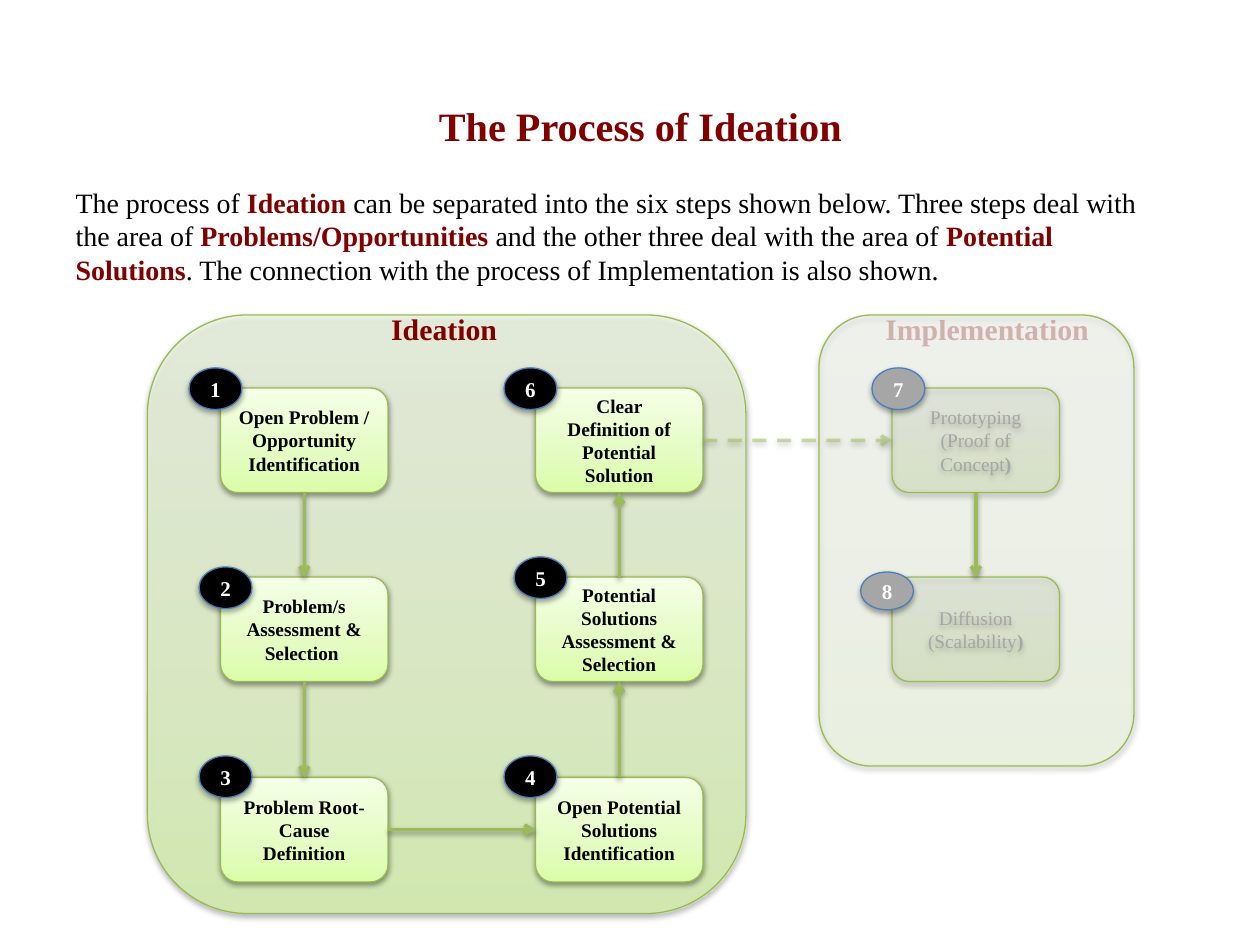
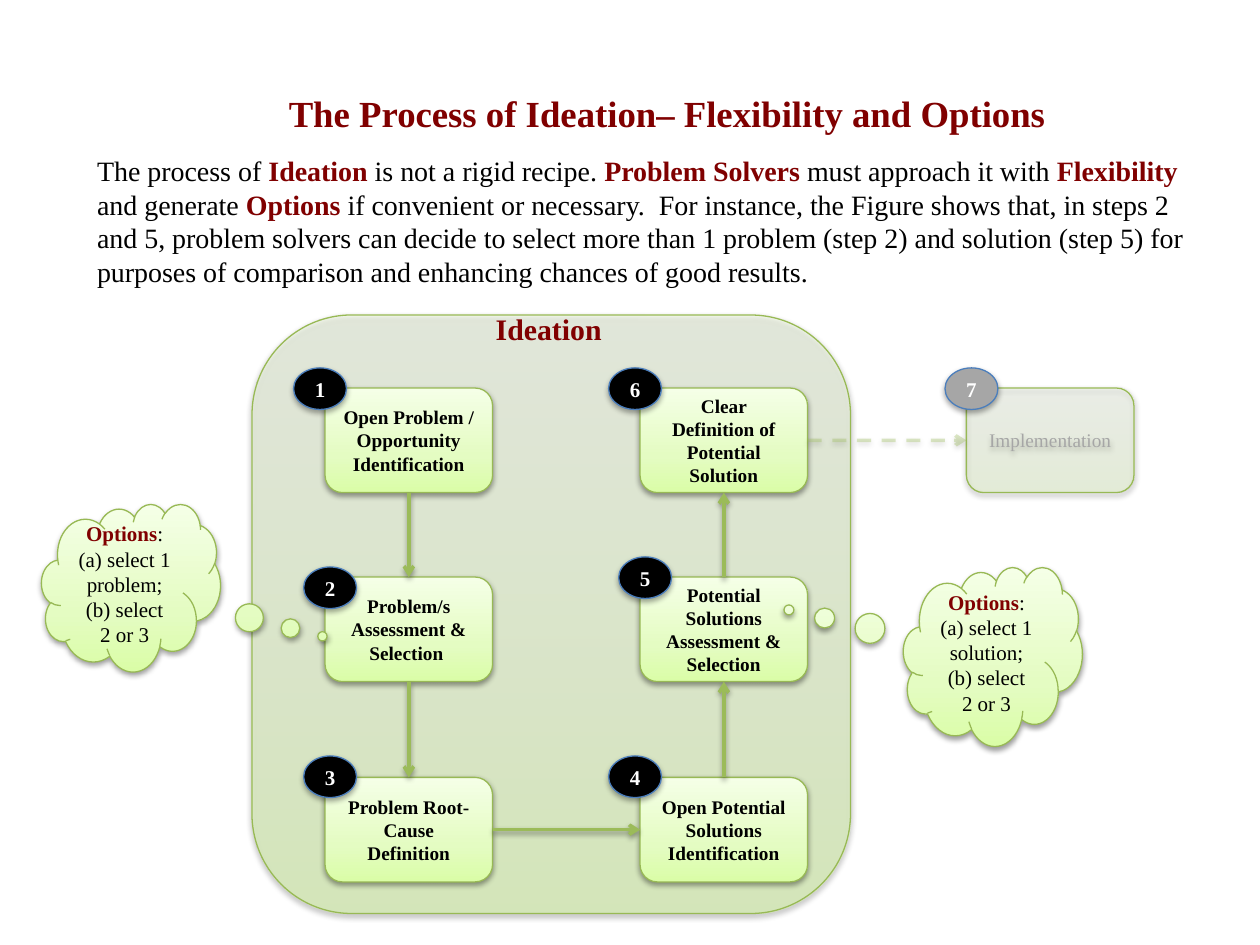
"""Build two slides on the process of ideation."""
from pptx import Presentation
from pptx.dml.color import RGBColor
from pptx.enum.dml import MSO_LINE
from pptx.enum.shapes import MSO_CONNECTOR, MSO_SHAPE as SHAPE
from pptx.enum.text import MSO_ANCHOR, MSO_AUTO_SIZE, PP_ALIGN as ALIGN
from pptx.oxml import parse_xml
from pptx.oxml.ns import nsdecls, qn
from pptx.util import Inches, Pt

COLORS = {"maroon": "800000", "black": "000000", "white": "FFFFFF", "grey": "A6A6A6",
          "edge": "98B955", "arrow": "9BBB59", "badge_edge": "4B7EBC"}
GRADIENT = ((0, "DAFDA7"), (35, "E4FCC2"), (100, "F5FFE7"))
FONT = "Times New Roman"
NODE_W, NODE_H = 1.33, 0.83
LEFT_X, RIGHT_X = 1.75, 4.25
ROWS = (3.08, 4.58, 6.17)
STEPS = (
    ("Open Problem / Opportunity Identification", LEFT_X, ROWS[0], -0.25, -0.16),
    ("Problem/s Assessment & Selection ", LEFT_X, ROWS[1], -0.17, -0.08),
    ("Problem Root-Cause Definition", LEFT_X, ROWS[2], -0.17, -0.17),
    ("Open Potential Solutions Identification", RIGHT_X, ROWS[2], -0.25, -0.17),
    ("Potential Solutions Assessment & Selection", RIGHT_X, ROWS[1], -0.17, -0.16),
    ("Clear Definition of Potential Solution", RIGHT_X, ROWS[0], -0.25, -0.16),
)
TOP, LEFT, BOTTOM, RIGHT = range(4)
LINKS = ((BOTTOM, TOP), (BOTTOM, TOP), (RIGHT, LEFT), (TOP, BOTTOM), (TOP, BOTTOM))


def rgb(name):
    """Return a named colour."""
    return RGBColor.from_string(COLORS[name])


def box(x, y, w, h):
    """Return a position and size in inches."""
    return Inches(x), Inches(y), Inches(w), Inches(h)


def set_alpha(element, percent):
    """Make the first colour inside an element partly transparent."""
    color = element.find(".//" + qn("a:srgbClr"))
    color.append(parse_xml(f'<a:alpha {nsdecls("a")} val="{percent * 1000}"/>'))


def add_shadow(sp, alpha=38, distance=20000):
    """Give a shape or connector a soft shadow straight below it."""
    sp.element.spPr.append(parse_xml(
        f'<a:effectLst {nsdecls("a")}><a:outerShdw blurRad="40000" dist="{distance}" '
        f'dir="5400000" rotWithShape="0"><a:srgbClr val="000000">'
        f'<a:alpha val="{alpha * 1000}"/></a:srgbClr></a:outerShdw></a:effectLst>'))


def write(p, runs, size, align=ALIGN.CENTER):
    """Fill a paragraph with (text, colour, bold) runs; a newline is a line break."""
    p.alignment = align
    for text, color, bold in runs:
        if text.startswith("\n"):
            p.add_line_break()
        r = p.add_run()
        r.text = text.lstrip("\n")
        for key, value in {"name": FONT, "size": Pt(size), "bold": bold}.items():
            setattr(r.font, key, value)
        r.font.color.rgb = rgb(color)


def write_all(sp, paragraphs, size):
    """Write centred paragraphs in the middle of a shape."""
    tf = sp.text_frame
    tf.word_wrap = True
    tf.vertical_anchor = MSO_ANCHOR.MIDDLE
    for i, runs in enumerate(paragraphs):
        write(tf.add_paragraph() if i else tf.paragraphs[0], runs, size)


def add_green(slide, kind, pos, alpha=100):
    """Add a shape with the green gradient."""
    sp = slide.shapes.add_shape(kind, *box(*pos))
    stops = "".join(f'<a:gs pos="{at * 1000}"><a:srgbClr val="{color}">'
                    f'<a:alpha val="{alpha * 1000}"/></a:srgbClr></a:gs>'
                    for at, color in GRADIENT)
    sp.element.spPr.append(parse_xml(
        f'<a:gradFill {nsdecls("a")} rotWithShape="1"><a:gsLst>{stops}</a:gsLst>'
        f'<a:lin ang="16200000" scaled="0"/></a:gradFill>'))
    sp.line.color.rgb = rgb("edge")
    sp.line.width = Pt(0.75)
    add_shadow(sp)
    return sp


def add_node(slide, x, y, paragraphs, alpha=100):
    """Add one process box."""
    sp = add_green(slide, SHAPE.ROUNDED_RECTANGLE, (x, y, NODE_W, NODE_H), alpha)
    write_all(sp, paragraphs, 11)
    return sp


def add_badge(slide, number, x, y, fill="black", h=0.33):
    """Add a numbered oval."""
    sp = slide.shapes.add_shape(SHAPE.OVAL, *box(x, y, 0.42, h))
    sp.fill.solid()
    sp.fill.fore_color.rgb = rgb(fill)
    sp.line.color.rgb = rgb("badge_edge")
    sp.line.width = Pt(0.75)
    add_shadow(sp, 35, 23000)
    write_all(sp, [[(str(number), "white", True)]], 12)


def add_arrow(slide, start, start_side, end, end_side, alpha=None):
    """Join two boxes by an arrow, dashed and faded when alpha is given."""
    c = slide.shapes.add_connector(MSO_CONNECTOR.STRAIGHT, 0, 0, 0, 0)
    c.begin_connect(start, start_side)
    c.end_connect(end, end_side)
    c.line.color.rgb = rgb("arrow")
    c.line.width = Pt(2)
    ln = c.line._get_or_add_ln()
    if alpha:
        c.line.dash_style = MSO_LINE.DASH
        set_alpha(ln, alpha)
    ln.append(parse_xml(f'<a:tailEnd {nsdecls("a")} type="arrow"/>'))
    add_shadow(c)


def add_label(slide, text, x, w, alpha=None):
    """Add the heading of a panel."""
    tf = slide.shapes.add_textbox(*box(x, 2.42, w, 0.39)).text_frame
    tf.word_wrap = False
    p = tf.paragraphs[0]
    write(p, [(text, "maroon", True)], 17)
    if alpha:
        set_alpha(p.runs[0]._r, alpha)


def fill_placeholder(sp, pos, runs, size, align):
    """Move a placeholder and write one unbulleted paragraph in it."""
    sp.left, sp.top, sp.width, sp.height = box(*pos)
    tf = sp.text_frame
    for key, value in {"word_wrap": True, "auto_size": MSO_AUTO_SIZE.NONE,
                       "vertical_anchor": MSO_ANCHOR.TOP}.items():
        setattr(tf, key, value)
    p = tf.paragraphs[0]
    pPr = p._p.get_or_add_pPr()
    pPr.set("marL", "0")
    pPr.set("indent", "0")
    pPr.append(parse_xml(f'<a:buNone {nsdecls("a")}/>'))
    p.space_before = Pt(0)
    write(p, runs, size, align)


def add_slide(prs, title, title_pos, title_size, body, body_pos):
    """Add a slide; every second piece of the body is a bold maroon key word."""
    slide = prs.slides.add_slide(prs.slide_layouts[1])
    fill_placeholder(slide.shapes.title, title_pos, [(title, "maroon", True)],
                     title_size, ALIGN.CENTER)
    runs = [(text, "maroon" if i % 2 else "black", bool(i % 2))
            for i, text in enumerate(body)]
    fill_placeholder(slide.placeholders[1], body_pos, runs, 16, ALIGN.LEFT)
    return slide


def add_ideation(slide, dx, alpha):
    """Draw the six ideation steps and return the last box."""
    add_green(slide, SHAPE.ROUNDED_RECTANGLE, (1.17 + dx, 2.5, 4.75, 4.75), alpha)
    nodes = [add_node(slide, x + dx, y, [[(text, "black", True)]])
             for text, x, y, _, _ in STEPS]
    for start, end, sides in zip(nodes, nodes[1:], LINKS):
        add_arrow(slide, start, sides[0], end, sides[1])
    for number, (_, x, y, badge_dx, badge_dy) in enumerate(STEPS, 1):
        add_badge(slide, number, x + dx + badge_dx, y + badge_dy)
    add_label(slide, "Ideation", 3 + dx, 1.05)
    return nodes[-1]


def add_options(slide, pos, tip, noun):
    """Add a thought cloud with the options of a step."""
    sp = add_green(slide, SHAPE.CLOUD_CALLOUT, pos)
    for i, value in enumerate(tip):
        sp.adjustments[i] = value
    write_all(sp, [
        [("Options", "maroon", True), (":", "black", False),
         (f"\n(a) select 1 {noun};", "black", False)],
        [("(b) select 2 or 3", "black", False)]], 12)


def build_process(prs):
    """Build the slide with ideation and implementation."""
    slide = add_slide(
        prs, "The Process of Ideation", (2.67, 0.75, 4.83, 0.49), 23,
        ("The process of ", "Ideation ",
         "can be separated into the six steps shown below. Three steps deal with the area of ",
         "Problems/Opportunities ", "and the other three deal with the area of ",
         "Potential Solutions",
         ". The connection with the process of Implementation is also shown."),
        (0.5, 1.42, 8.92, 0.91))
    last = add_ideation(slide, 0, 65)
    add_green(slide, SHAPE.ROUNDED_RECTANGLE, (6.5, 2.5, 2.5, 3.58), 18)
    prototype, diffusion = [
        add_node(slide, 7.08, y, [[(first, "grey", False)],
                                  [(second, "grey", False), (")", "grey", True)]], 25)
        for y, first, second in ((ROWS[0], "Prototyping", "(Proof of Concept"),
                                 (ROWS[1], "Diffusion", "(Scalability"))]
    add_arrow(slide, last, RIGHT, prototype, LEFT, 49)
    add_arrow(slide, prototype, BOTTOM, diffusion, TOP)
    add_badge(slide, 7, 6.92, 2.92, "grey")
    add_badge(slide, 8, 6.83, 4.54, "grey", 0.3)
    add_label(slide, "Implementation", 6.92, 1.83, 25)


def build_flexibility(prs):
    """Build the slide with the options at steps 2 and 5."""
    slide = add_slide(
        prs, "The Process of Ideation– Flexibility and Options", (0.92, 0.67, 8.75, 0.45), 21,
        ("The process of ", "Ideation ", "is not a rigid recipe. ", "Problem Solvers ",
         "must approach it with ", "Flexibility ", "and generate ", "Options ",
         "if convenient or necessary.  For instance, the Figure shows that, in steps 2 and 5, "
         "problem solvers can decide to select more than 1 problem (step 2) and solution "
         "(step 5) for purposes of comparison and enhancing chances of good results."),
        (0.67, 1.17, 8.92, 1.18))
    last = add_ideation(slide, 0.83, 50)
    implementation = add_node(slide, 7.67, ROWS[0], [[("Implementation", "grey", False)]], 25)
    add_arrow(slide, last, RIGHT, implementation, LEFT, 35)
    add_badge(slide, 7, 7.5, 2.92, "grey")
    add_options(slide, (0.33, 4, 1.42, 1.33), (1.07, 0.29), "problem")
    add_options(slide, (7.17, 4.5, 1.42, 1.42), (-1.14, -0.26), "solution")


def main():
    """Build and save the presentation."""
    prs = Presentation()
    prs.slide_width, prs.slide_height = Inches(10), Inches(7.5)
    build_process(prs)
    build_flexibility(prs)
    prs.save("out.pptx")


if __name__ == "__main__":
    main()
